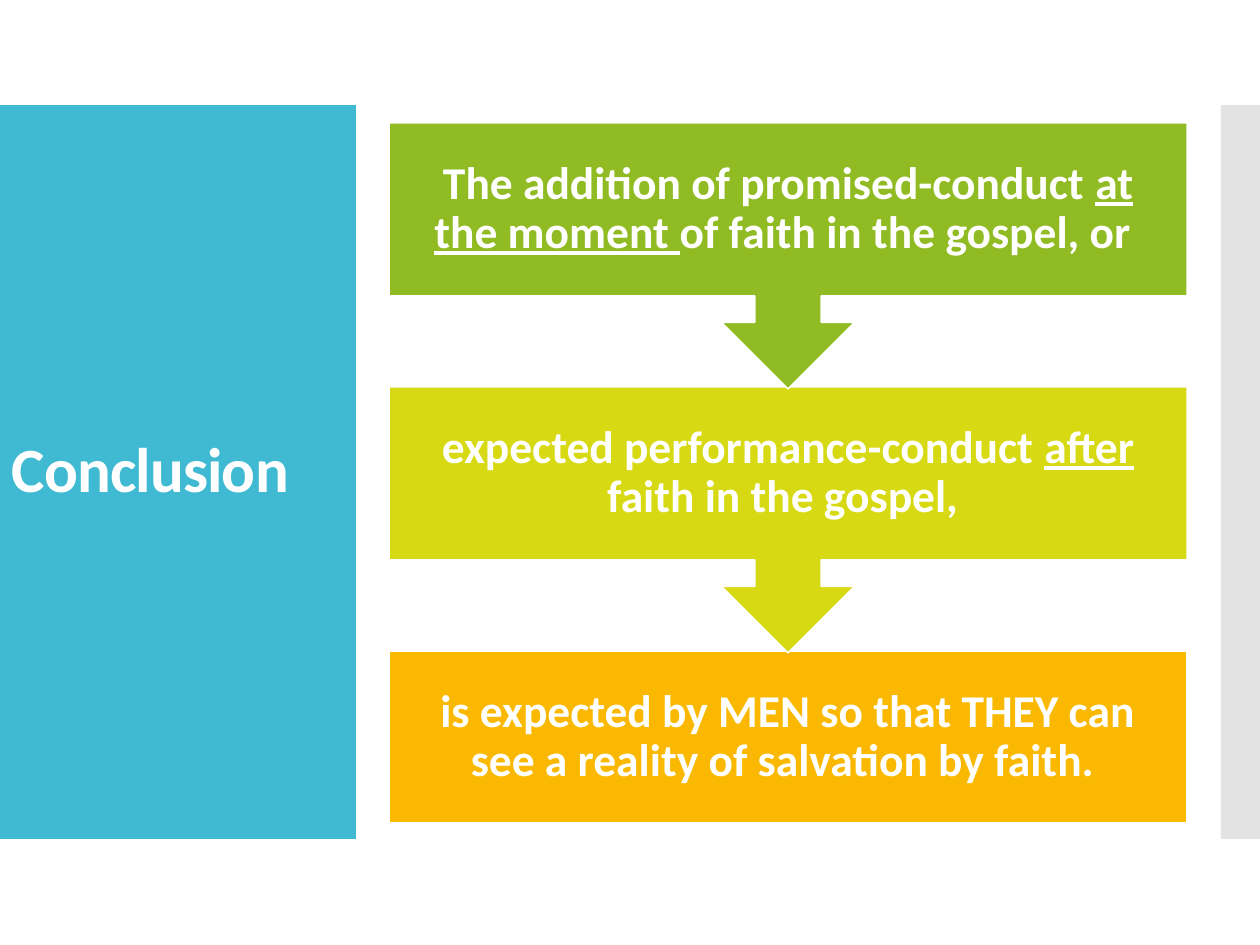
"""Build the conclusion slide: a title panel beside three steps that lead downwards."""
from pptx import Presentation
from pptx.dml.color import RGBColor
from pptx.enum.shapes import MSO_SHAPE as Shape
from pptx.enum.text import MSO_ANCHOR as Anchor, PP_ALIGN as Align
from pptx.oxml.ns import qn
from pptx.util import Emu, Pt
from lxml.etree import SubElement

SCALE = 914400 / 126
WHITE = RGBColor(0xFF, 0xFF, 0xFF)
TEAL = RGBColor(0x40, 0xBA, 0xD2)
GREY = RGBColor(0xC8, 0xC8, 0xC8)
GREEN = RGBColor(0x90, 0xBB, 0x23)
LIME = RGBColor(0xD7, 0xD9, 0x13)
AMBER = RGBColor(0xFA, 0xB9, 0x00)

STEP_LEFT, STEP_TOP, STEP_WIDTH, STEP_PITCH = 389, 123, 798, 264
CALLOUT_HEIGHT, BOX_HEIGHT = 266, 172
STEPS = [
    (Shape.DOWN_ARROW_CALLOUT, CALLOUT_HEIGHT, GREEN,
     [("The addition of promised-conduct ", False), ("at the moment ", True),
      ("of faith in the gospel, or ", False)]),
    (Shape.DOWN_ARROW_CALLOUT, CALLOUT_HEIGHT, LIME,
     [("expected performance-conduct ", False), ("after", True),
      (" faith in the gospel, ", False)]),
    (Shape.RECTANGLE, BOX_HEIGHT, AMBER,
     [("is expected by MEN so that THEY can see a reality of salvation by faith. ", False)]),
]


def px(*lengths):
    return [Emu(round(length * SCALE)) for length in lengths]


class SlideBuilder:
    """Holds the text style and the current slide."""

    font = "Calibri"
    text_color = WHITE
    line_spacing = 0.9

    def __init__(self, slide):
        self.slide = slide

    def add_text(self, shape, spans, size, align, margins):
        frame = shape.text_frame
        frame.word_wrap = True
        frame.vertical_anchor = Anchor.MIDDLE
        (frame.margin_left, frame.margin_top,
         frame.margin_right, frame.margin_bottom) = px(*margins)
        para = frame.paragraphs[0]
        para.alignment = align
        para.line_spacing = self.line_spacing
        for text, underlined in spans:
            span = para.add_run()
            span.text = text
            span.font.name = self.font
            span.font.size = Pt(size)
            span.font.bold = True
            span.font.underline = underlined
            span.font.color.rgb = self.text_color

    def block(self, kind, left, top, width, height, color):
        shape = self.slide.shapes.add_shape(kind, *px(left, top, width, height))
        shape.shadow.inherit = False
        shape.fill.solid()
        shape.fill.fore_color.rgb = color
        shape.line.fill.background()
        return shape

    def panel(self, left, top, width, height, color, opacity=100):
        shape = self.block(Shape.RECTANGLE, left, top, width, height, color)
        if opacity < 100:
            fill_color = next(shape.element.iter(qn("a:srgbClr")))
            SubElement(fill_color, qn("a:alpha")).set("val", str(opacity * 1000))

    def title(self, text, left, top, width, height):
        box = self.slide.shapes.add_textbox(*px(left, top, width, height))
        self.add_text(box, [(text, False)], 36, Align.LEFT, (12, 6, 12, 6))
        next(box.element.iter(qn("a:rPr"))).set("spc", "-50")

    def step(self, kind, top, height, color, spans):
        shape = self.block(kind, STEP_LEFT, top, STEP_WIDTH, height, color)
        shape.line.color.rgb = WHITE
        shape.line.width = Pt(0.85)
        self.add_text(shape, spans, 26, Align.CENTER, (25, 25, 25, 25))


def main():
    deck = Presentation()
    deck.slide_width, deck.slide_height = px(1260, 945)
    page = SlideBuilder(deck.slides.add_slide(deck.slide_layouts[6]))

    page.panel(0, 105, 356, 734, TEAL)
    page.panel(1221, 105, 39, 734, GREY, opacity=50)
    page.title("Conclusion", 0, 155, 330, 634)

    for index, (kind, height, color, spans) in reversed(list(enumerate(STEPS))):
        page.step(kind, STEP_TOP + index * STEP_PITCH, height, color, spans)

    deck.save("out.pptx")


if __name__ == "__main__":
    main()
